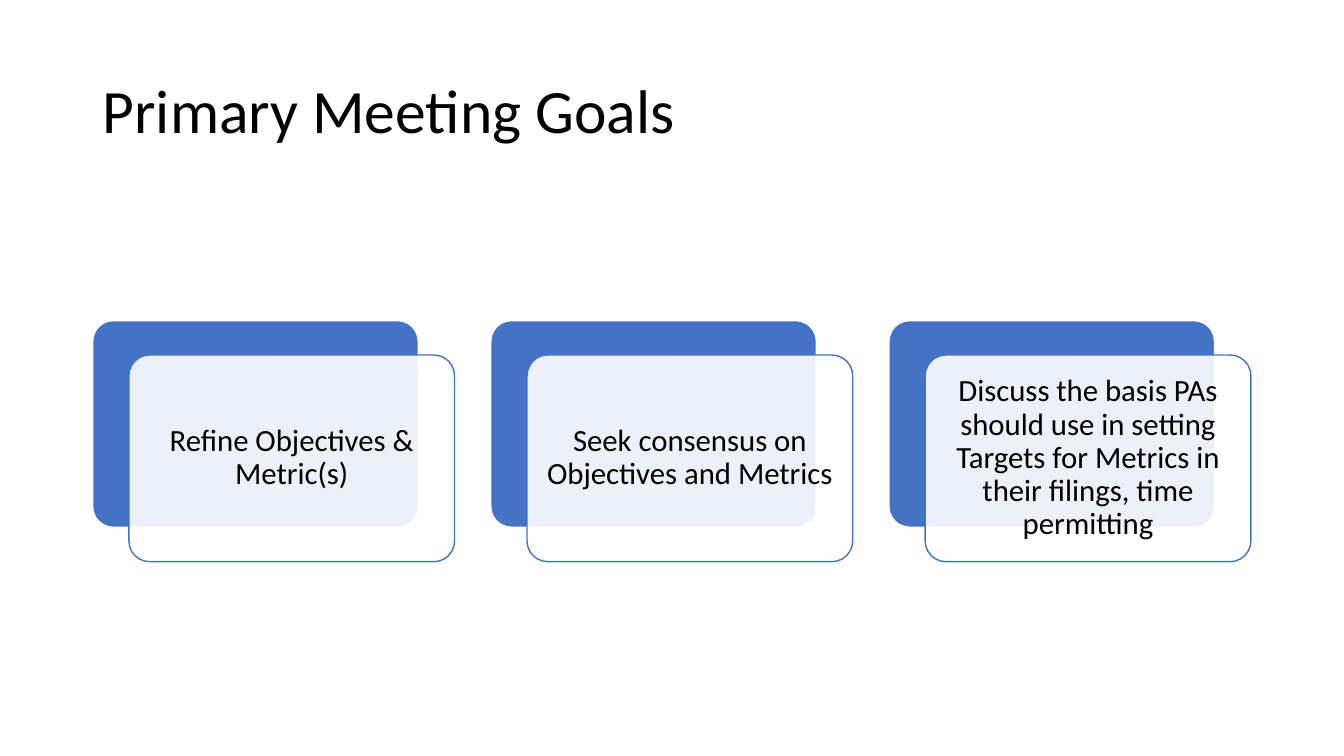
from lxml import etree
from pptx import Presentation
from pptx.dml.color import RGBColor
from pptx.enum.shapes import MSO_SHAPE
from pptx.enum.text import MSO_ANCHOR, MSO_AUTO_SIZE, PP_ALIGN
from pptx.oxml.ns import qn
from pptx.util import Pt

ROUNDED = MSO_SHAPE.ROUNDED_RECTANGLE
MIDDLE = MSO_ANCHOR.MIDDLE
NO_AUTOFIT = MSO_AUTO_SIZE.NONE
LEFT, CENTER = PP_ALIGN.LEFT, PP_ALIGN.CENTER

TITLE_ONLY = 5
FONT = "Calibri"
COLORS = {"text": "000000", "blue": "4472C4", "white": "FFFFFF"}

GOALS = [
    "Refine Objectives & Metric(s)",
    "Seek consensus on Objectives and Metrics",
    "Discuss the basis PAs should use in setting Targets for Metrics "
    "in their filings, time permitting",
]

# Goal card geometry, in points
CARD_LEFT, CARD_TOP = 66.2, 229
CARD_WIDTH, CARD_HEIGHT = 232.6, 147.6
CARD_PITCH = 284.4
FRONT_DX, FRONT_DY = 25.9, 24.6
CARD_INSET = 6.5


def color(name):
    return RGBColor.from_string(COLORS[name])


def write_text(frame, text, size, alignment):
    frame.word_wrap = True
    frame.auto_size = NO_AUTOFIT
    frame.vertical_anchor = MIDDLE
    frame.text = text
    paragraph = frame.paragraphs[0]
    paragraph.alignment = alignment
    paragraph.line_spacing = 0.9
    paragraph.font.name = FONT
    paragraph.font.size = Pt(size)
    paragraph.font.color.rgb = color("text")


def set_title(slide, text):
    title = slide.shapes.title
    title.left, title.top = Pt(66.2), Pt(28.8)
    title.width, title.height = Pt(828), Pt(104.4)
    write_text(title.text_frame, text, 44, LEFT)


def add_card(slide, left, top, fill, outline):
    card = slide.shapes.add_shape(
        ROUNDED, Pt(left), Pt(top), Pt(CARD_WIDTH), Pt(CARD_HEIGHT))
    card.adjustments[0] = 0.1
    card.shadow.inherit = False
    card.fill.solid()
    card.fill.fore_color.rgb = color(fill)
    card.line.color.rgb = color(outline)
    card.line.width = Pt(1)
    return card


def set_opacity(shape, percent):
    fill_color = shape.fill._xPr.find(qn("a:solidFill"))[0]
    etree.SubElement(fill_color, qn("a:alpha"), val=str(percent * 1000))


def add_goal(slide, left, text):
    add_card(slide, left, CARD_TOP, "blue", "white")
    front = add_card(slide, left + FRONT_DX, CARD_TOP + FRONT_DY, "white", "blue")
    set_opacity(front, 90)
    frame = front.text_frame
    frame.margin_left = frame.margin_right = Pt(CARD_INSET)
    frame.margin_top = frame.margin_bottom = Pt(CARD_INSET)
    write_text(frame, text, 22, CENTER)


def main():
    presentation = Presentation()
    presentation.slide_width, presentation.slide_height = Pt(960), Pt(540)
    slide = presentation.slides.add_slide(presentation.slide_layouts[TITLE_ONLY])

    # Title
    set_title(slide, "Primary Meeting Goals")

    # Row of goal cards
    for index, goal in enumerate(GOALS):
        add_goal(slide, CARD_LEFT + index * CARD_PITCH, goal)

    presentation.save("out.pptx")


if __name__ == "__main__":
    main()
